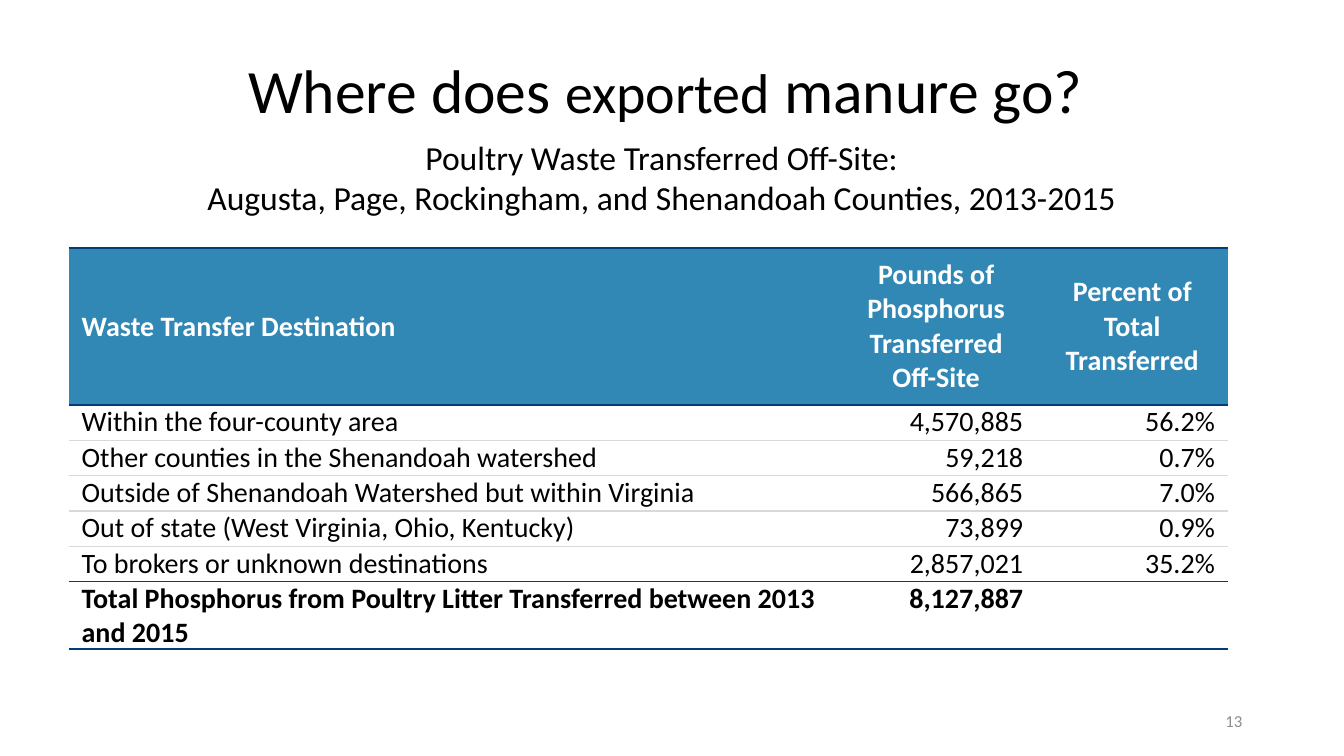
from lxml.etree import SubElement
from pptx import Presentation
from pptx.dml.color import RGBColor
from pptx.enum.text import MSO_ANCHOR as Anchor, PP_ALIGN as Align
from pptx.oxml.ns import qn
from pptx.util import Inches, Pt

BLACK, WHITE, GREY = "000000", "FFFFFF", "8C8C8C"
BLUE, NAVY, PALE = "3188B5", "003D7A", "D9D9D9"
HEAVY, LIGHT = (NAVY, 1.5), (PALE, 1)

HEAD = ["Waste Transfer Destination",
        "Pounds of Phosphorus Transferred Off-Site",
        "Percent of Total Transferred"]
BODY = [
    ["Within the four-county area", "4,570,885", "56.2%"],
    ["Other counties in the Shenandoah watershed", "59,218", "0.7%"],
    ["Outside of Shenandoah Watershed but within Virginia", "566,865", "7.0%"],
    ["Out of state (West Virginia, Ohio, Kentucky)", "73,899", "0.9%"],
    ["To brokers or unknown destinations", "2,857,021", "35.2%"],
]
TOTAL = ["Total Phosphorus from Poultry Litter Transferred between 2013 and 2015",
         "8,127,887", ""]


def color(code):
    """Turn a hex string into a colour."""
    return RGBColor.from_string(code)


def add_run(para, text, size, code=BLACK, bold=False):
    """Append one styled run to a paragraph."""
    run = para.add_run()
    run.text = text
    font = run.font
    font.name, font.size, font.bold = "Calibri", Pt(size), bold
    font.color.rgb = color(code)


def add_text(slide, box, lines, align, anchor=Anchor.TOP, code=BLACK, space=1.0):
    """Fill a text box with lines, each a list of (text, size) runs."""
    frame = slide.shapes.add_textbox(*map(Inches, box)).text_frame
    frame.word_wrap = True
    frame.vertical_anchor = anchor
    for num, line in enumerate(lines):
        para = frame.add_paragraph() if num else frame.paragraphs[0]
        para.alignment, para.line_spacing = align, space
        for text, size in line:
            add_run(para, text, size, code)


def set_edges(cell, top, bottom):
    """Draw the top and bottom cell borders and clear the sides."""
    props = cell._tc.get_or_add_tcPr()
    for side, edge in zip("LRTB", (None, None, top, bottom)):
        line = SubElement(props, qn(f"a:ln{side}"))
        if edge:
            code, width = edge
            line.set("w", str(Pt(width)))
            fill = SubElement(line, qn("a:solidFill"))
            SubElement(fill, qn("a:srgbClr")).set("val", code)
        else:
            SubElement(line, qn("a:noFill"))


def set_cell(cell, text, align, top, bottom, head=False, bold=False):
    """Style one cell and write its text."""
    set_edges(cell, top, bottom)
    cell.margin_left = cell.margin_right = Inches(0.13)
    cell.margin_top = cell.margin_bottom = 0
    cell.vertical_anchor = Anchor.MIDDLE if head else Anchor.TOP
    if head:
        cell.fill.solid()
        cell.fill.fore_color.rgb = color(BLUE)
    else:
        cell.fill.background()
    para = cell.text_frame.paragraphs[0]
    para.alignment = align
    if text:
        add_run(para, text, 20, WHITE if head else BLACK, bold)


def add_grid(slide, box):
    """Place the table of destinations in the box."""
    rows = [HEAD, *BODY, TOTAL]
    last = len(rows) - 1
    table = slide.shapes.add_table(len(rows), len(HEAD), *map(Inches, box)).table
    table.first_row = table.horz_banding = False
    for col, share in zip(table.columns, (7.61, 1.99, 1.9)):
        col.width = Inches(box[2] * share / 11.5)
    for num, row in enumerate(rows):
        head, total = num == 0, num == last
        table.rows[num].height = Inches(1.56 if head else 0.35)
        top = HEAVY if num in (0, 1, last) else LIGHT
        bottom = HEAVY if num in (0, last - 1, last) else LIGHT
        for pos, text in enumerate(row):
            side = Align.CENTER if head else Align.RIGHT
            set_cell(table.cell(num, pos), text, side if pos else Align.LEFT,
                     top, bottom, head, head or total)


def main():
    """Build and save the slide."""
    deck = Presentation()
    deck.slide_width, deck.slide_height = Inches(13.33), Inches(7.5)
    slide = deck.slides.add_slide(deck.slide_layouts[6])
    title = [("Where does ", 44), ("exported", 40), (" manure go?", 44)]
    add_text(slide, (0.85, 0.2, 11.5, 1.45), [title], Align.CENTER,
             Anchor.MIDDLE, space=0.9)
    add_grid(slide, (0.68, 2.46, 11.5, 3.66))
    lines = ["Poultry Waste Transferred Off-Site: ",
             "Augusta, Page, Rockingham, and Shenandoah Counties, 2013-2015 "]
    add_text(slide, (0.18, 1.31, 12.84, 0.91),
             [[(line, 24)] for line in lines], Align.CENTER)
    add_text(slide, (9.42, 6.95, 3, 0.4), [[("13", 12)]], Align.RIGHT,
             Anchor.MIDDLE, GREY)
    deck.save("out.pptx")


if __name__ == "__main__":
    main()
